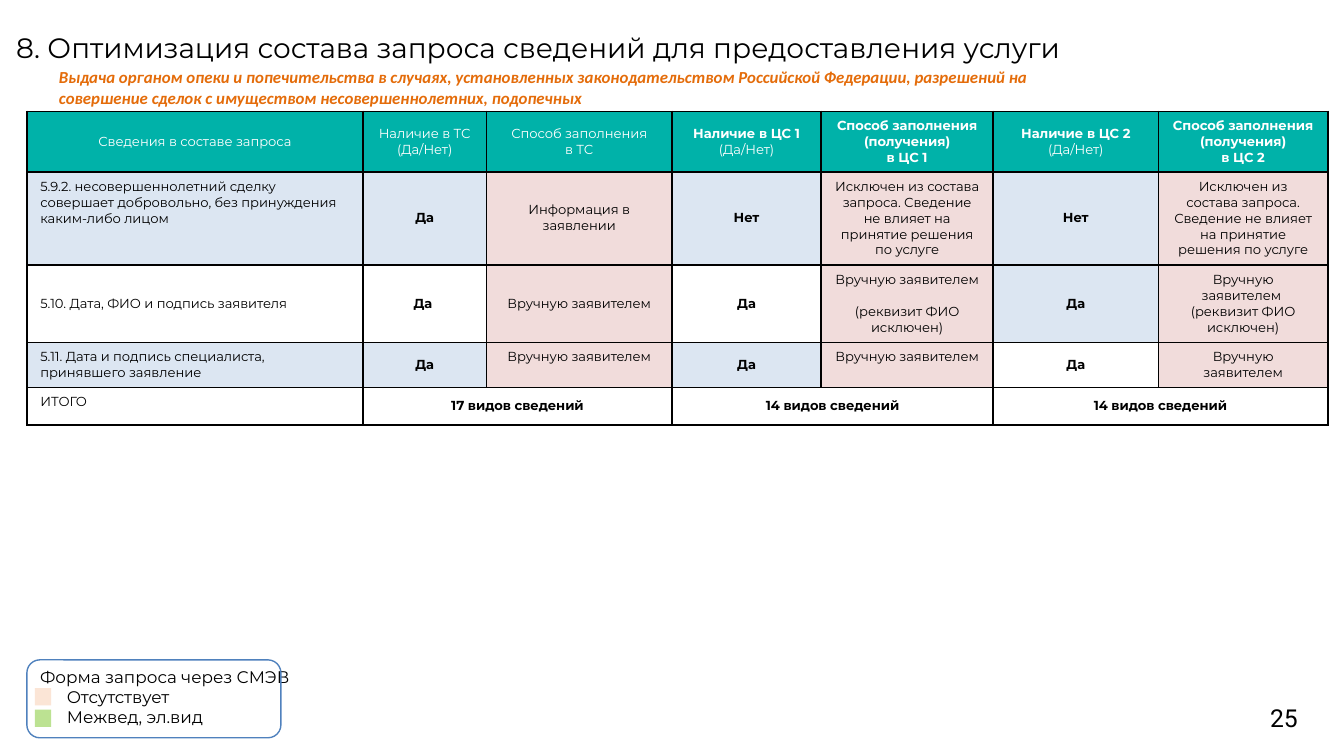
from lxml.etree import SubElement
from pptx import Presentation
from pptx.dml.color import RGBColor
from pptx.enum.shapes import MSO_SHAPE
from pptx.enum.text import MSO_ANCHOR, MSO_AUTO_SIZE, PP_ALIGN
from pptx.oxml.ns import qn
from pptx.util import Inches, Pt

COLORS = {
    "black": "000000", "white": "FFFFFF", "teal": "00B2A9", "blue": "DCE6F2",
    "pink": "F1DCDB", "orange": "E46C0A", "line": "4F81BD",
    "green": "BCE292", "peach": "FBE5D6",
}
WIDTHS = [2.5, 0.92, 1.38, 1.11, 1.28, 1.23, 1.26]
HEIGHTS = [0.45, 0.69, 0.58, 0.33, 0.28]

# Cell text: a leading * makes a line bold
DROPPED = "Исключен из состава запроса. Сведение не влияет на принятие решения по услуге"
MANUAL = "Вручную заявителем"
NO_NAME = MANUAL + " \v(реквизит ФИО исключен)"
ROWS = [
    ["Сведения в составе запроса", "Наличие в ТС\n(Да/Нет)", "Способ заполнения\nв ТС",
     "*Наличие в ЦС 1\n(Да/Нет)", "*Способ заполнения (получения)\n*в ЦС 1",
     "*Наличие в ЦС 2\n(Да/Нет)", "*Способ заполнения (получения)\n*в ЦС 2"],
    ["5.9.2. несовершеннолетний сделку совершает добровольно, без принуждения каким-либо лицом",
     "*Да", "Информация в заявлении", "*Нет", DROPPED, "*Нет", DROPPED],
    ["5.10. Дата, ФИО и подпись заявителя",
     "*Да ", MANUAL, "*Да", NO_NAME, "*Да", NO_NAME],
    ["5.11. Дата и подпись специалиста, принявшего заявление",
     "*Да", MANUAL, "*Да", MANUAL, "*Да", MANUAL],
    ["ИТОГО", "*17 видов сведений", "", "*14 видов сведений", "", "*14 видов сведений", ""],
]
# One letter per cell: t teal, b blue, p pink, w white
FILLS = ["ttttttt", "bbpbpbp", "wwpwpbp", "bbpbpwp", "wwwwwww"]
SHADES = {"t": "teal", "b": "blue", "p": "pink", "w": "white"}
# Cells whose text sits at the top
TOPS = {(1, 0), (3, 0), (4, 0), (3, 2), (3, 4), (3, 6)}


def rgb(name):
    return RGBColor.from_string(COLORS[name])


def style(para, color="black", **form):
    for run in para.runs:
        for key, value in form.items():
            setattr(run.font, key, value)
        run.font.color.rgb = rgb(color)
    # Line breaks take the size of the text around them
    for mark in para._p.findall(qn("a:br")):
        props = SubElement(mark, qn("a:rPr"), sz=str(int(form["size"].pt * 100)))
        SubElement(props, qn("a:latin"), typeface=form["name"])


def place(shape, box):
    for key, value in zip(("left", "top", "width", "height"), box):
        setattr(shape, key, Inches(value))


def clear(frame):
    for side in ("left", "top", "right", "bottom"):
        setattr(frame, "margin_" + side, 0)


def add_title(slide, text, box):
    title = slide.shapes.title
    place(title, box)
    frame = title.text_frame
    frame.text = text
    clear(frame)
    frame.auto_size = MSO_AUTO_SIZE.NONE
    frame.vertical_anchor = MSO_ANCHOR.TOP
    frame.paragraphs[0].alignment = PP_ALIGN.LEFT
    style(frame.paragraphs[0], size=Pt(15), name="Montserrat")


def add_text(slide, text, box, **form):
    frame = slide.shapes.add_textbox(*map(Inches, box)).text_frame
    frame.word_wrap = True
    frame.text = text
    for para in frame.paragraphs:
        style(para, **form)
    return frame


def add_shape(slide, kind, box, fill=None, line=None):
    shape = slide.shapes.add_shape(kind, *map(Inches, box))
    shape.shadow.inherit = False
    if fill:
        shape.fill.solid()
        shape.fill.fore_color.rgb = rgb(fill)
    else:
        shape.fill.background()
    if line:
        shape.line.color.rgb = rgb(line)
        shape.line.width = Pt(0.75)
    else:
        shape.line.fill.background()


def add_edges(cell):
    props = cell._tc.get_or_add_tcPr()
    for side in "LRTB":
        edge = SubElement(props, qn("a:ln" + side), w=str(Pt(1)))
        fill = SubElement(edge, qn("a:solidFill"))
        SubElement(fill, qn("a:srgbClr"), val=COLORS["black"])


def fill_cell(cell, text, row, col):
    add_edges(cell)
    cell.fill.solid()
    cell.fill.fore_color.rgb = rgb(SHADES[FILLS[row][col]])
    cell.vertical_anchor = MSO_ANCHOR.TOP if (row, col) in TOPS else MSO_ANCHOR.MIDDLE
    lines = text.split("\n")
    cell.text = "\n".join(line.lstrip("*") for line in lines)
    for para, line in zip(cell.text_frame.paragraphs, lines):
        para.alignment = PP_ALIGN.CENTER if col or row == 0 else PP_ALIGN.LEFT
        style(para, "black" if row else "white", size=Pt(7),
              name="Montserrat", bold=line.startswith("*"))
        if not line:
            para.font.size = Pt(7)


def add_grid(slide, left, top):
    box = (left, top, sum(WIDTHS), sum(HEIGHTS))
    grid = slide.shapes.add_table(len(ROWS), len(WIDTHS), *map(Inches, box)).table
    grid.first_row = grid.horz_banding = False
    for col, width in zip(grid.columns, WIDTHS):
        col.width = Inches(width)
    for row, height in zip(grid.rows, HEIGHTS):
        row.height = Inches(height)
    for row, texts in enumerate(ROWS):
        for col, text in enumerate(texts):
            fill_cell(grid.cell(row, col), text, row, col)
    # Totals span two columns each
    last = len(ROWS) - 1
    for col in (1, 3, 5):
        grid.cell(last, col).merge(grid.cell(last, col + 1))


def add_legend(slide, left, top):
    frame = add_text(slide, "Форма запроса через СМЭВ\nОтсутствует\nМежвед, эл.вид",
                     (left, top, 2.1, 0.56), size=Pt(9), name="Montserrat")
    for para in frame.paragraphs[1:]:
        para._p.get_or_add_pPr().set("marL", str(Inches(0.2)))
    for step, fill in enumerate(("peach", "green")):
        add_shape(slide, MSO_SHAPE.RECTANGLE,
                  (left + 0.06, top + 0.21 + 0.16 * step, 0.12, 0.13), fill)
    add_shape(slide, MSO_SHAPE.ROUNDED_RECTANGLE, (left, top, 1.89, 0.58), line="line")


def main():
    deck = Presentation()
    # Widescreen, 16 to 9
    deck.slide_width = Inches(10)
    deck.slide_height = Inches(10 * 9 / 16)
    slide = deck.slides.add_slide(deck.slide_layouts[5])

    # Page number and headings
    page = add_text(slide, "25", (9.45, 5.19, 0.47, 0.3), size=Pt(13.2), name="Roboto")
    clear(page)
    page.vertical_anchor = MSO_ANCHOR.MIDDLE
    add_title(slide, "8. Оптимизация состава запроса сведений для предоставления услуги",
              (0.12, 0.23, 9.14, 0.29))

    # Table, service name and legend
    add_grid(slide, 0.2, 0.83)
    add_text(slide, "Выдача органом опеки и попечительства в случаях, установленных "
             "законодательством Российской Федерации, разрешений на совершение сделок "
             "с имуществом несовершеннолетних, подопечных", (0.34, 0.45, 7.83, 0.4),
             color="orange", size=Pt(9), name="Calibri", bold=True, italic=True)
    add_legend(slide, 0.2, 4.91)
    deck.save("out.pptx")


if __name__ == "__main__":
    main()
